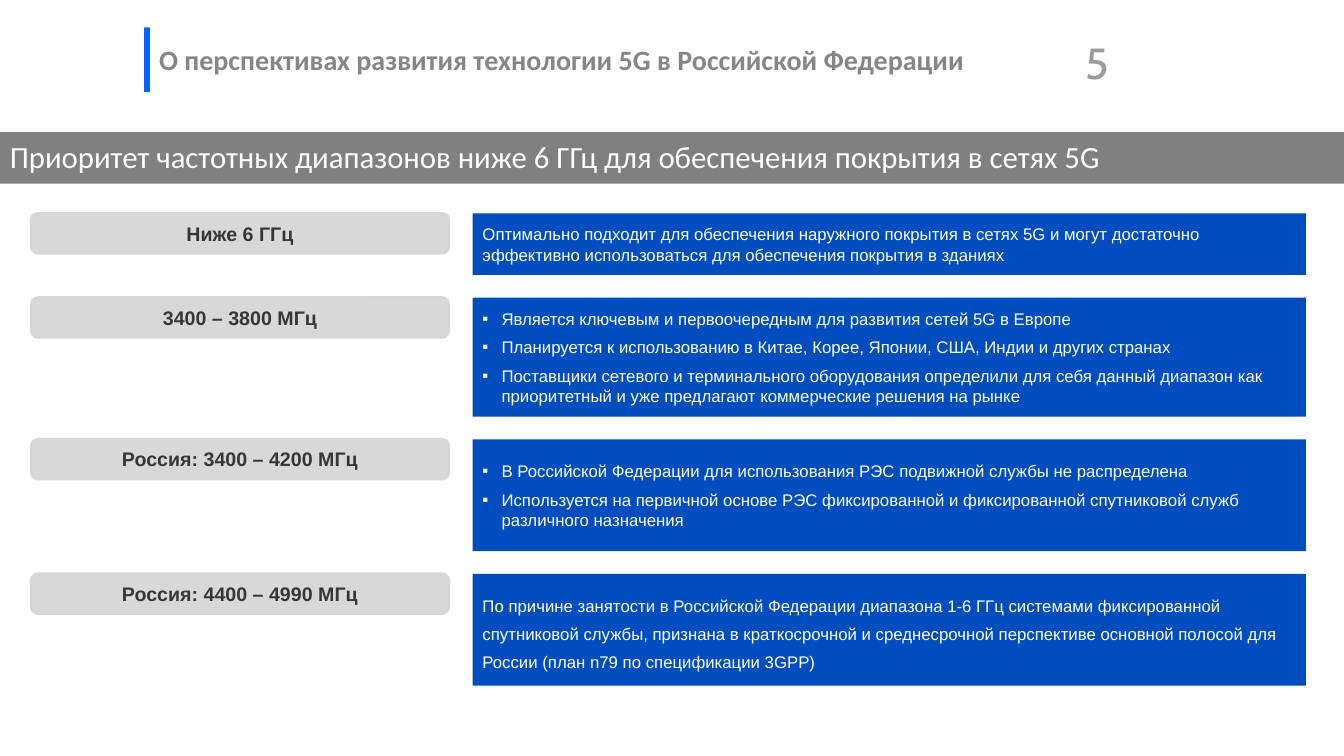
from dataclasses import dataclass

from lxml.etree import SubElement
from pptx import Presentation
from pptx.dml.color import RGBColor
from pptx.enum.shapes import MSO_SHAPE
from pptx.enum.text import MSO_ANCHOR, PP_ALIGN
from pptx.oxml.ns import qn
from pptx.util import Cm, Pt


@dataclass(frozen=True)
class Theme:
    blue: str = "004DBF"
    accent: str = "0066FF"
    band: str = "808080"
    pill: str = "D8D8D8"
    edge: str = "D7D7D7"
    dark: str = "363636"
    title: str = "868686"
    number: str = "9A9A9A"
    white: str = "FFFFFF"
    head: str = "Calibri"
    body: str = "Arial"
    digit: str = "Cabin"
    big: int = 31
    lead: int = 22
    mid: int = 20
    label: int = 14
    small: int = 12


THEME = Theme()

# Rows: label, panel height in cm, paragraphs, bulleted, line spacing
ROWS = [
    ("Ниже 6 ГГц", 1.55, [
        "Оптимально подходит для обеспечения наружного покрытия в сетях 5G и могут "
        "достаточно эффективно использоваться для обеспечения покрытия в зданиях",
    ], False, None),
    ("3400 – 3800 МГц", 3.0, [
        "Является ключевым и первоочередным для развития сетей 5G в Европе",
        "Планируется к использованию в Китае, Корее, Японии, США, Индии и других странах",
        "Поставщики сетевого и терминального оборудования определили для себя данный "
        "диапазон как приоритетный и уже предлагают коммерческие решения на рынке",
    ], True, None),
    ("Россия: 3400 – 4200 МГц", 2.82, [
        "В Российской Федерации для использования РЭС подвижной службы не распределена",
        "Используется на первичной основе РЭС фиксированной и фиксированной спутниковой "
        "служб различного назначения",
    ], True, None),
    ("Россия: 4400 – 4990 МГц", 2.82, [
        "По причине занятости в Российской Федерации диапазона 1-6 ГГц системами "
        "фиксированной спутниковой службы, признана в краткосрочной и среднесрочной "
        "перспективе основной полосой для России (план n79 по спецификации 3GPP)",
    ], False, 1.4),
]


def add_box(slide, kind, left, top, width, height, fill, edge=None):
    box = slide.shapes.add_shape(kind, Cm(left), Cm(top), Cm(width), Cm(height))
    box.shadow.inherit = False
    box.fill.solid()
    box.fill.fore_color.rgb = RGBColor.from_string(fill)
    if edge:
        box.line.color.rgb = RGBColor.from_string(edge)
        box.line.width = Pt(2)
    else:
        box.line.fill.background()
    return box


def add_text(slide, left, top, width, height):
    box = slide.shapes.add_textbox(Cm(left), Cm(top), Cm(width), Cm(height))
    box.text_frame.word_wrap = True
    return box


def set_text(box, lines, face, size, color, bold=False,
             align=PP_ALIGN.LEFT, space=None, anchor=MSO_ANCHOR.MIDDLE):
    frame = box.text_frame
    frame.text = "\n".join(lines)
    frame.vertical_anchor = anchor
    for para in frame.paragraphs:
        para.alignment = align
        if space:
            para.line_spacing = space
        for run in para.runs:
            font = run.font
            font.name, font.size, font.bold = face, Pt(size), bold
            font.color.rgb = RGBColor.from_string(color)


def add_marks(box):
    for para in box.text_frame.paragraphs:
        para.space_after = Pt(6)
        props = para._p.get_or_add_pPr()
        props.set("marL", str(Cm(0.48)))
        props.set("indent", str(-Cm(0.48)))
        tint = SubElement(props, qn("a:buClr"))
        SubElement(tint, qn("a:srgbClr"), val=THEME.white)
        SubElement(props, qn("a:buFont"), typeface=THEME.body)
        SubElement(props, qn("a:buChar"), char="▪")


def add_head(slide):
    # Accent bar, page number, topic
    add_box(slide, MSO_SHAPE.RECTANGLE, 3.63, 0.69, 0.15, 1.63, THEME.accent)
    page = add_text(slide, 20.88, 0.81, 7.29, 0.76)
    frame = page.text_frame
    frame.margin_left = frame.margin_right = Cm(0.23)
    frame.margin_top = frame.margin_bottom = Cm(0.1)
    set_text(page, ["5"], THEME.digit, THEME.big, THEME.number,
             align=PP_ALIGN.RIGHT, anchor=MSO_ANCHOR.TOP)
    topic = add_text(slide, 3.76, 0.74, 22.02, 1.7)
    set_text(topic, ["О перспективах развития технологии 5G в Российской Федерации"],
             THEME.head, THEME.mid, THEME.title, bold=True, space=0.7)

    # Headline band
    band = add_box(slide, MSO_SHAPE.RECTANGLE, 0, 3.33, 33.87, 1.3, THEME.band)
    band.text_frame.margin_bottom = 0
    set_text(band, ["Приоритет частотных диапазонов ниже 6 ГГц "
                    "для обеспечения покрытия в сетях 5G"],
             THEME.head, THEME.lead, THEME.white, space=0.7)


def add_row(slide, top, label, height, lines, marks, space):
    pill = add_box(slide, MSO_SHAPE.ROUNDED_RECTANGLE, 0.79, top, 10.52, 1,
                   THEME.pill, THEME.edge)
    set_text(pill, [label], THEME.body, THEME.label, THEME.dark,
             bold=True, align=PP_ALIGN.CENTER)
    panel = add_box(slide, MSO_SHAPE.RECTANGLE, 11.91, top, 21, height, THEME.blue)
    set_text(panel, lines, THEME.body, THEME.small, THEME.white, space=space)
    if marks:
        add_marks(panel)


def main():
    deck = Presentation()
    deck.slide_width, deck.slide_height = Cm(33.87), Cm(19.05)
    slide = deck.slides.add_slide(deck.slide_layouts[6])
    add_head(slide)

    # Frequency bands, stacked with an equal gap
    top, gap = 5.38, 0.57
    for label, height, lines, marks, space in ROWS:
        add_row(slide, top, label, height, lines, marks, space)
        top += height + gap
    deck.save("out.pptx")


if __name__ == "__main__":
    main()
